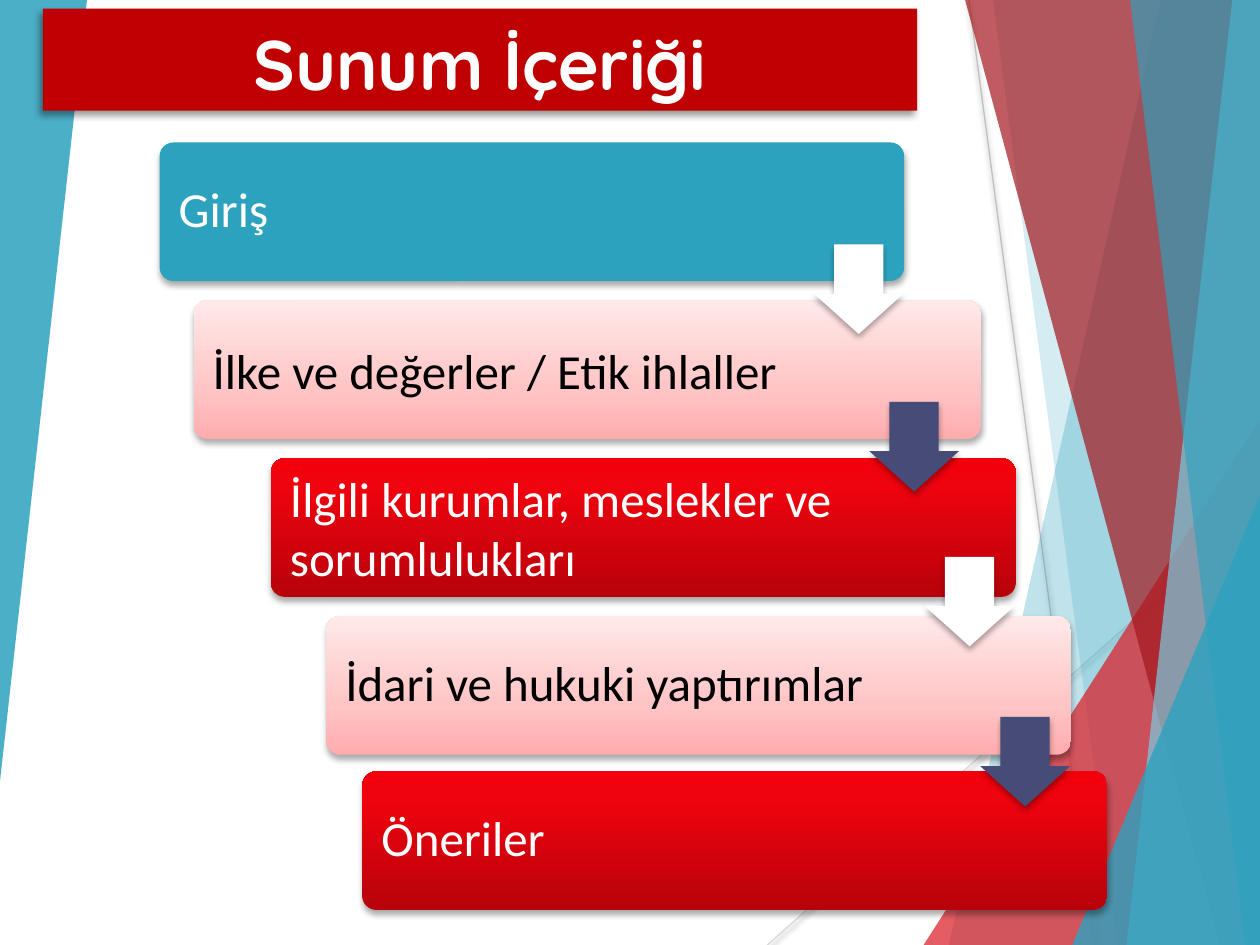
from dataclasses import dataclass
from typing import Optional, Union

import lxml.etree
import pptx
import pptx.dml.color
import pptx.enum.shapes
import pptx.enum.text
import pptx.oxml.ns
import pptx.shapes.autoshape
import pptx.shapes.base
import pptx.slide
import pptx.util

Pt = pptx.util.Pt
RGB = pptx.dml.color.RGBColor.from_string
qn = pptx.oxml.ns.qn
MSO = pptx.enum.shapes.MSO_SHAPE
ANCHOR = pptx.enum.text.MSO_ANCHOR
ALIGN = pptx.enum.text.PP_ALIGN
WIDTH, HEIGHT = 720, 540


@dataclass(frozen=True)
class Shadow:
    alpha: int
    blur: float
    dist: float
    angle: int


Gradient = tuple[tuple[int, str], ...]
Fill = Union[str, Gradient]


@dataclass(frozen=True)
class Theme:
    teal: str = "2DA2BF"
    pale_teal: str = "7ACBE0"
    red: str = "DA1F28"
    dark_red: str = "A3171E"
    title_red: str = "C00000"
    navy: str = "474B78"
    white: str = "FFFFFF"
    black: str = "000000"
    pink_fade: Gradient = ((0, "FFACAD"), (35, "FFC4C5"), (100, "FFE9E9"))
    red_fade: Gradient = ((0, "B8020B"), (80, "EE030E"), (100, "F2000C"))
    title_font: str = "Quicksand"
    body_font: str = "Calibri"
    title_size: int = 40
    body_size: int = 28
    line_shadow: Shadow = Shadow(38, 3.1, 1.6, 90)
    title_shadow: Shadow = Shadow(40, 4, 3, 135)
    step_shadow: Shadow = Shadow(32, 3.5, 2.2, 90)


T = Theme()


@dataclass(frozen=True)
class Ray:
    x1: float
    y1: float
    x2: float
    y2: float
    color: str


@dataclass(frozen=True)
class Blade:
    top_x: float
    bottom_x: float
    color: str
    alpha: int


@dataclass(frozen=True)
class Wedge:
    x: float
    y: float
    w: float
    h: float
    color: str
    alpha: int
    rotation: int = 0


@dataclass(frozen=True)
class Step:
    text: str
    x: float
    y: float
    w: float
    fill: Fill
    color: str
    spacing: float = 1.0


@dataclass(frozen=True)
class Arrow:
    y: float
    color: str


RAYS = [Ray(553.7, 0, 625.7, 540, "BFBFBF"), Ray(720, 290.2, 438.5, 540, "D9D9D9")]
FACETS: list[Union[Blade, Wedge]] = [
    Blade(663.1, 542.2, T.teal, 30),
    Blade(567.4, 638.6, T.teal, 20),
    Wedge(527.8, 239.8, 192.2, 300.2, T.red, 72),
    Blade(551.5, 697, T.dark_red, 70),
    Blade(704.2, 643.7, T.pale_teal, 70),
    Blade(645.8, 711.4, T.teal, 65),
    Wedge(612.7, 283, 107.3, 257, T.teal, 80),
    Wedge(0, 0, 49.7, 446.4, T.teal, 85, 180),
]
STEP_HEIGHT = 79.2
STEPS = [
    Step("Giriş", 91.2, 81.4, 425.5, T.teal, T.white, 0.9),
    Step("İlke ve değerler / Etik ihlaller", 110.6, 171.6, 450, T.pink_fade, T.black),
    Step("İlgili kurumlar, meslekler ve sorumlulukları", 154.8, 261.9, 425.5, T.red_fade, T.white),
    Step("İdari ve hukuki yaptırımlar", 186.4, 352.1, 425.5, T.pink_fade, T.black, 0.9),
    Step("Öneriler", 207.1, 440.8, 425.5, T.red_fade, T.white, 0.9),
]
ARROW_SIZE, ARROW_X, ARROW_SHIFT = 51.2, 465.1, 31.7
ARROWS = [Arrow(139.7, T.white), Arrow(229.7, T.navy), Arrow(318.2, T.white), Arrow(409.7, T.navy)]


def set_shadow(sp: pptx.shapes.base.BaseShape, shadow: Optional[Shadow]) -> None:
    effects = lxml.etree.SubElement(sp._element.find(qn("p:spPr")), qn("a:effectLst"))
    if shadow:
        outer = lxml.etree.SubElement(
            effects, qn("a:outerShdw"), blurRad=str(Pt(shadow.blur)), dist=str(Pt(shadow.dist)),
            dir=str(shadow.angle * 60000), rotWithShape="0")
        clr = lxml.etree.SubElement(outer, qn("a:srgbClr"), val=T.black)
        lxml.etree.SubElement(clr, qn("a:alpha"), val=str(shadow.alpha * 1000))


def paint(sp: pptx.shapes.autoshape.Shape, fill: Fill, alpha: int = 100,
          shadow: Optional[Shadow] = None) -> None:
    if isinstance(fill, str):
        sp.fill.solid()
        sp.fill.fore_color.rgb = RGB(fill)
        if alpha < 100:
            clr = next(sp._element.iter(qn("a:srgbClr")))
            lxml.etree.SubElement(clr, qn("a:alpha"), val=str(alpha * 1000))
    else:
        sp.fill.gradient()
        stops = next(sp._element.iter(qn("a:gsLst")))
        for old in list(stops):
            stops.remove(old)
        for pos, color in fill:
            stop = lxml.etree.SubElement(stops, qn("a:gs"), pos=str(pos * 1000))
            lxml.etree.SubElement(stop, qn("a:srgbClr"), val=color)
        next(sp._element.iter(qn("a:lin"))).set("ang", str(270 * 60000))
    sp.line.fill.background()
    set_shadow(sp, shadow)


def add_shape(s: pptx.slide.Slide, kind: MSO, x: float, y: float, w: float, h: float,
              adjustments: tuple[float, ...] = ()) -> pptx.shapes.autoshape.Shape:
    sp = s.shapes.add_shape(kind, Pt(x), Pt(y), Pt(w), Pt(h))
    for i, value in enumerate(adjustments):
        sp.adjustments[i] = value
    return sp


def add_ray(s: pptx.slide.Slide, ray: Ray) -> None:
    line = s.shapes.add_connector(pptx.enum.shapes.MSO_CONNECTOR.STRAIGHT,
                                  Pt(ray.x1), Pt(ray.y1), Pt(ray.x2), Pt(ray.y2))
    line.line.color.rgb = RGB(ray.color)
    line.line.width = Pt(0.75)
    set_shadow(line, T.line_shadow)


def add_facet(s: pptx.slide.Slide, facet: Union[Blade, Wedge]) -> None:
    if isinstance(facet, Blade):
        fb = s.shapes.build_freeform(Pt(facet.top_x), 0)
        corners = [(WIDTH, 0), (WIDTH, HEIGHT), (facet.bottom_x, HEIGHT)]
        fb.add_line_segments([(Pt(x), Pt(y)) for x, y in corners], close=True)
        sp = fb.convert_to_shape()
    else:
        sp = add_shape(s, MSO.ISOSCELES_TRIANGLE, facet.x, facet.y, facet.w, facet.h, (1,))
        sp.rotation = facet.rotation
    paint(sp, facet.color, facet.alpha)


def write(sp: pptx.shapes.autoshape.Shape, text: str, font: str, size: int, color: str,
          align: ALIGN, anchor: ANCHOR, bold: bool = False, spacing: float = 1.0) -> None:
    tf = sp.text_frame
    tf.word_wrap = True
    tf.vertical_anchor = anchor
    p = tf.paragraphs[0]
    p.text = text
    p.alignment = align
    p.line_spacing = spacing
    p.font.name, p.font.size, p.font.bold = font, Pt(size), bold
    p.font.color.rgb = RGB(color)


def add_title(s: pptx.slide.Slide) -> None:
    sp = add_shape(s, MSO.RECTANGLE, 24.5, 5, 499.7, 58.3)
    paint(sp, T.title_red, shadow=T.title_shadow)
    write(sp, "Sunum İçeriği", T.title_font, T.title_size, T.white, ALIGN.CENTER, ANCHOR.BOTTOM, bold=True)


def add_step(s: pptx.slide.Slide, step: Step) -> None:
    sp = add_shape(s, MSO.ROUNDED_RECTANGLE, step.x, step.y, step.w, STEP_HEIGHT, (0.1,))
    paint(sp, step.fill, shadow=T.step_shadow)
    tf = sp.text_frame
    tf.margin_left = tf.margin_top = tf.margin_bottom = Pt(8.6)
    tf.margin_right = Pt(92)
    write(sp, step.text, T.body_font, T.body_size, step.color, ALIGN.LEFT, ANCHOR.MIDDLE, spacing=step.spacing)


def main() -> None:
    prs = pptx.Presentation()
    prs.slide_width, prs.slide_height = Pt(WIDTH), Pt(HEIGHT)
    s = prs.slides.add_slide(prs.slide_layouts[6])
    for ray in RAYS:
        add_ray(s, ray)
    for facet in FACETS:
        add_facet(s, facet)
    add_title(s)
    for step in STEPS:
        add_step(s, step)
    for i, arrow in enumerate(ARROWS):
        sp = add_shape(s, MSO.DOWN_ARROW, ARROW_X + i * ARROW_SHIFT, arrow.y, ARROW_SIZE, ARROW_SIZE, (0.55, 0.45))
        paint(sp, arrow.color, shadow=T.step_shadow)
    prs.save("out.pptx")


if __name__ == "__main__":
    main()
